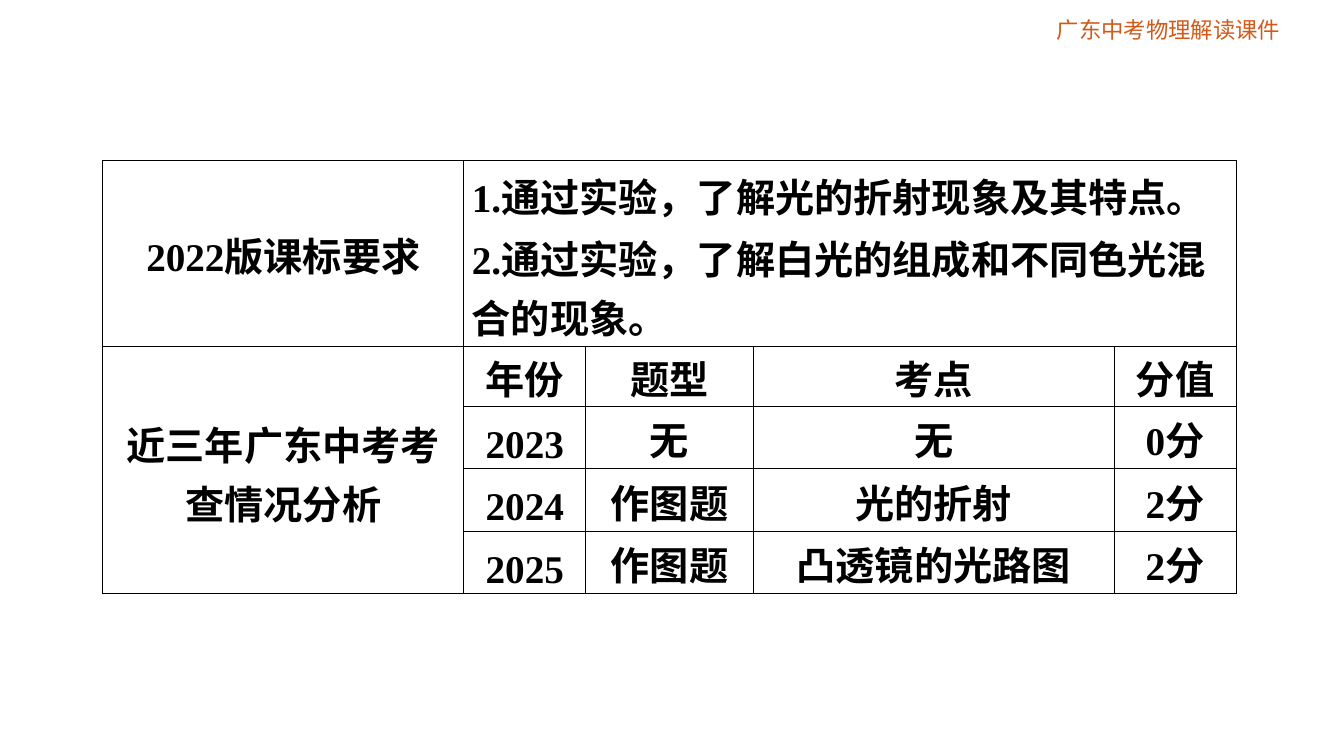
from dataclasses import dataclass
from itertools import groupby

from pptx import Presentation, util as u
from pptx.dml.color import RGBColor
from pptx.enum import text as t
from pptx.oxml import parse_xml
from pptx.oxml.ns import nsdecls


@dataclass(frozen=True)
class Theme:
    font: str = "Times New Roman"
    ink: str = "000000"
    brand: str = "D25A18"
    small: int = 16
    body: int = 28
    line: int = 42
    loose: int = 44
    rule: float = 0.75
    pad: float = 0.08


THEME = Theme()
WIDE, HIGH = 13.33, 7.5
COLS = (3.58, 1.21, 1.66, 3.58, 1.21)
ROWS = (1.85, 0.59, 0.62, 0.62, 0.62)
GOALS = (
    "1.通过实验，了解光的折射现象及其特点。",
    "2.通过实验，了解白光的组成和不同色光混",
    "合的现象。",
)
EXAMS = (
    ("年份", "题型", "考点", "分值"),
    ("2023", "无", "无", "0分"),
    ("2024", "作图题", "光的折射", "2分"),
    ("2025", "作图题", "凸透镜的光路图", "2分"),
)


def write(frame, *lines, size=THEME.body, color=THEME.ink, bold=True,
          align=t.PP_ALIGN.CENTER, gaps=(THEME.line,)):
    """Write one paragraph per line; the last of gaps serves all later lines."""
    frame.word_wrap = True
    for i, line in enumerate(lines):
        para = frame.paragraphs[0] if i == 0 else frame.add_paragraph()
        para.alignment = align
        gap = gaps[min(i, len(gaps) - 1)]
        if gap:
            para.line_spacing = u.Pt(gap)
        for tight, chars in groupby(line, key=lambda c: c in "，。"):
            run = para.add_run()
            run.text = "".join(chars)
            font = run.font
            font.name, font.size, font.bold = THEME.font, u.Pt(size), bold
            font.color.rgb = RGBColor.from_string(color)
            if tight:
                font._element.set("spc", "-100")


def style(cell):
    """Give a cell plain black rules, no fill and its margins."""
    props = cell._tc.get_or_add_tcPr()
    for side in "LRTB":
        props.append(parse_xml(
            f'<a:ln{side} {nsdecls("a")} w="{u.Pt(THEME.rule)}"><a:solidFill>'
            f'<a:srgbClr val="{THEME.ink}"/></a:solidFill></a:ln{side}>'))
    cell.fill.background()
    cell.vertical_anchor = t.MSO_ANCHOR.MIDDLE
    cell.margin_left = cell.margin_right = u.Inches(THEME.pad)
    cell.margin_top = cell.margin_bottom = 0


def banner(slide, box):
    frame = slide.shapes.add_textbox(*map(u.Inches, box)).text_frame
    frame.margin_left = frame.margin_right = 0
    frame.margin_top = frame.margin_bottom = 0
    frame.vertical_anchor = t.MSO_ANCHOR.MIDDLE
    write(frame, "广东中考物理解读课件", size=THEME.small,
          color=THEME.brand, bold=False, gaps=(None,))


def grid(slide, box):
    table = slide.shapes.add_table(
        len(ROWS), len(COLS), *map(u.Inches, box)).table
    table.first_row = table.horz_banding = False
    left, top, wide, high = box
    for col, share in zip(table.columns, COLS):
        col.width = u.Inches(wide * share / sum(COLS))
    for row, share in zip(table.rows, ROWS):
        row.height = u.Inches(high * share / sum(ROWS))
    for cell in table.iter_cells():
        style(cell)

    goal, exam = table.cell(0, 1), table.cell(1, 0)
    goal.merge(table.cell(0, len(COLS) - 1))
    exam.merge(table.cell(len(ROWS) - 1, 0))
    write(table.cell(0, 0).text_frame, "2022版课标要求")
    write(goal.text_frame, *GOALS, align=t.PP_ALIGN.LEFT,
          gaps=(THEME.loose, THEME.loose, THEME.line))
    write(exam.text_frame, "近三年广东中考考", "查情况分析",
          gaps=(THEME.loose, THEME.line))
    for r, row in enumerate(EXAMS, 1):
        for c, word in enumerate(row, 1):
            write(table.cell(r, c).text_frame, word)


def main():
    deck = Presentation()
    deck.slide_width, deck.slide_height = u.Inches(WIDE), u.Inches(HIGH)
    slide = deck.slides.add_slide(deck.slide_layouts[6])
    banner(slide, (10.02, 0.15, 3.14, 0.28))
    grid(slide, (1.02, 1.59, sum(COLS), sum(ROWS)))
    deck.save("out.pptx")


if __name__ == "__main__":
    main()
